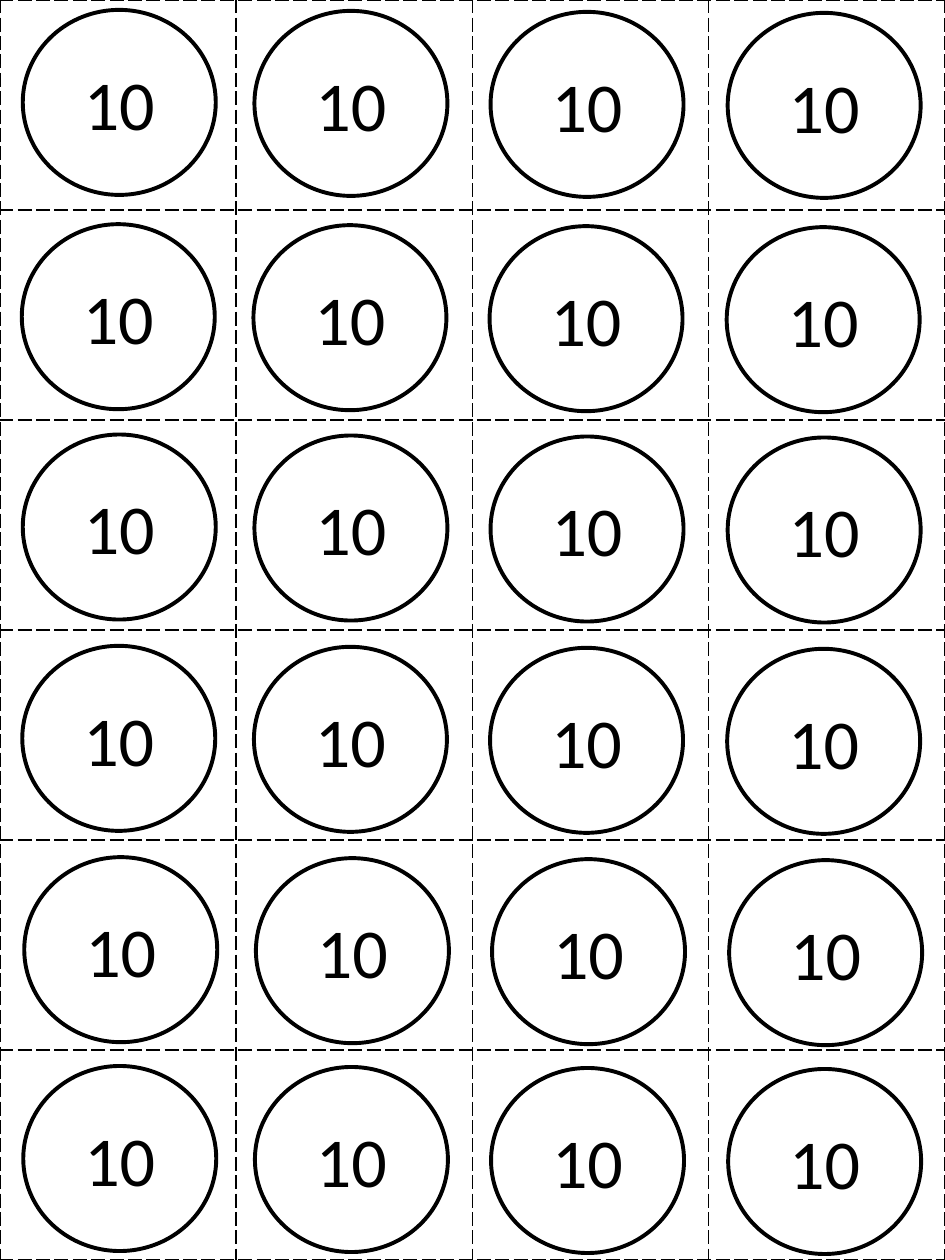
from lxml.etree import SubElement
from pptx import Presentation
from pptx.dml.color import RGBColor
from pptx.enum.shapes import MSO_SHAPE
from pptx.enum.text import MSO_ANCHOR, PP_ALIGN
from pptx.oxml.ns import qn
from pptx.util import Cm, Pt

BLACK = RGBColor(0x00, 0x00, 0x00)
WHITE = RGBColor(0xFF, 0xFF, 0xFF)

PAGE_WIDTH, PAGE_HEIGHT = Cm(19.05), Cm(25.4)
COUNTER_WIDTH, COUNTER_HEIGHT = 3.89, 3.73
COLUMN_LEFTS = (0.46, 5.13, 9.89, 14.67)
# Top of the first counter in each row, and the sideways shift of that row
ROWS = ((0.2, 0), (4.52, -0.02), (8.76, 0), (13.02, -0.01), (17.28, 0.03), (21.49, 0.01))
TOP_STEP = 0.02


def apply(target, values):
    for name, value in values.items():
        setattr(target, name, value)


class CounterSheet:
    font = {"name": "Calibri", "size": Pt(40)}
    frame = {
        "word_wrap": True,
        "vertical_anchor": MSO_ANCHOR.MIDDLE,
        "margin_left": Cm(0.25),
        "margin_right": Cm(0.25),
        "margin_top": Cm(0.13),
        "margin_bottom": Cm(0.13),
    }
    plain_table = {"first_row": False, "horz_banding": False}
    outline_width = Pt(2.25)
    border_width = Pt(1)
    border_dash = "lgDash"

    def __init__(self, slide):
        self.slide = slide

    def cutting_grid(self, row_count, column_count):
        grid = self.slide.shapes.add_table(
            row_count, column_count, 0, 0, PAGE_WIDTH, PAGE_HEIGHT
        ).table
        apply(grid, self.plain_table)
        for column in grid.columns:
            column.width = PAGE_WIDTH // column_count
        for row in grid.rows:
            row.height = PAGE_HEIGHT // row_count
        for cell in grid.iter_cells():
            self.dashed_borders(cell)
            cell.fill.background()

    def dashed_borders(self, cell):
        """Draw all four sides; call before the fill, which must follow them."""
        properties = cell._tc.get_or_add_tcPr()
        for side in ("lnL", "lnR", "lnT", "lnB"):
            border = SubElement(properties, qn(f"a:{side}"), w=str(self.border_width))
            fill = SubElement(border, qn("a:solidFill"))
            SubElement(fill, qn("a:srgbClr"), val=str(BLACK))
            SubElement(border, qn("a:prstDash"), val=self.border_dash)

    def counter(self, left, top, number):
        circle = self.slide.shapes.add_shape(
            MSO_SHAPE.OVAL, Cm(left), Cm(top), Cm(COUNTER_WIDTH), Cm(COUNTER_HEIGHT)
        )
        circle.shadow.inherit = False
        circle.fill.solid()
        circle.fill.fore_color.rgb = WHITE
        circle.line.color.rgb = BLACK
        circle.line.width = self.outline_width
        apply(circle.text_frame, self.frame)
        paragraph = circle.text_frame.paragraphs[0]
        paragraph.alignment = PP_ALIGN.CENTER
        run = paragraph.add_run()
        run.text = number
        apply(run.font, self.font)
        run.font.color.rgb = BLACK


def main():
    presentation = Presentation()
    apply(presentation, {"slide_width": PAGE_WIDTH, "slide_height": PAGE_HEIGHT})
    sheet = CounterSheet(presentation.slides.add_slide(presentation.slide_layouts[6]))

    sheet.cutting_grid(len(ROWS), len(COLUMN_LEFTS))
    for row_top, shift in ROWS:
        for column, left in enumerate(COLUMN_LEFTS):
            sheet.counter(left + shift, row_top + column * TOP_STEP, "10")

    presentation.save("out.pptx")


if __name__ == "__main__":
    main()
